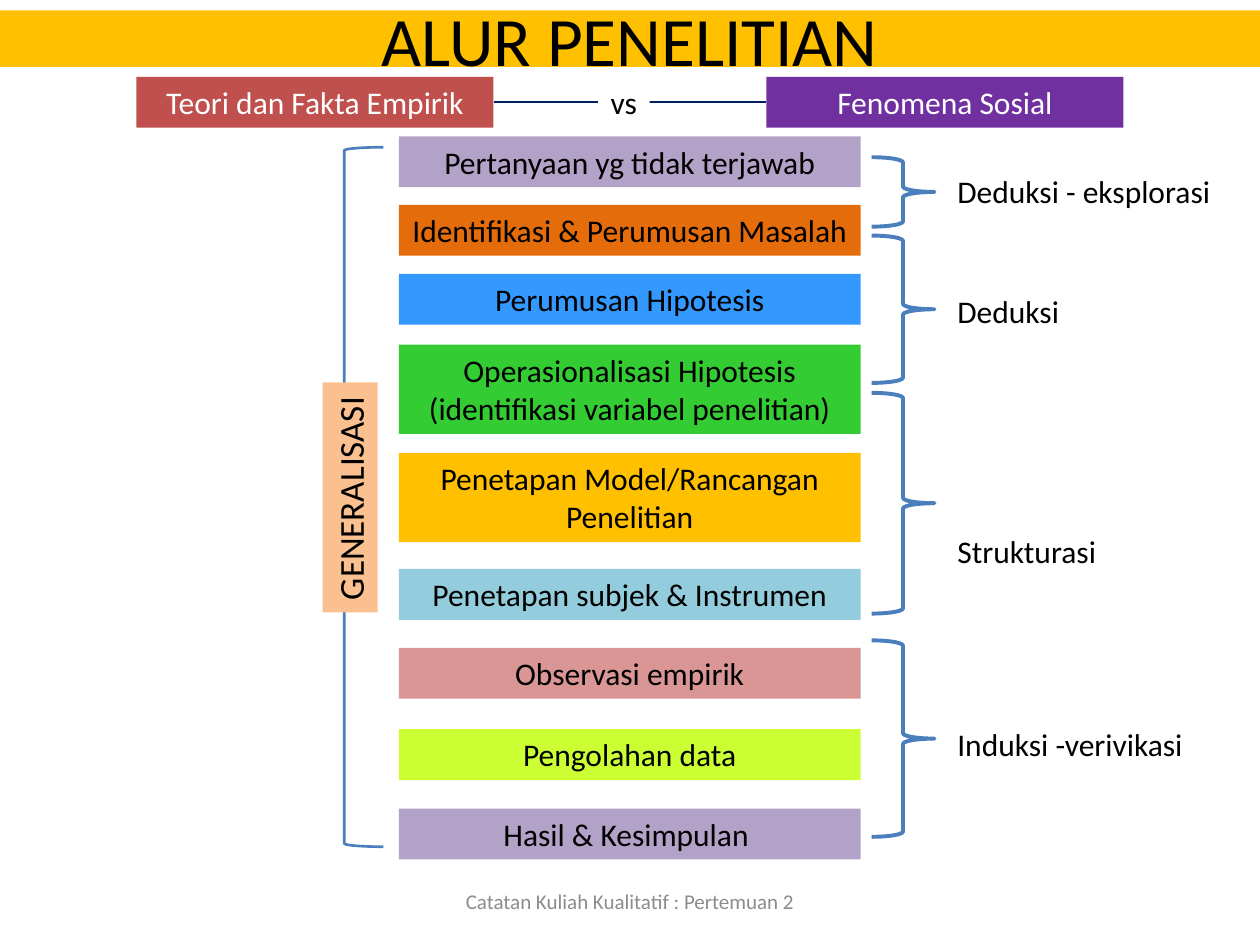
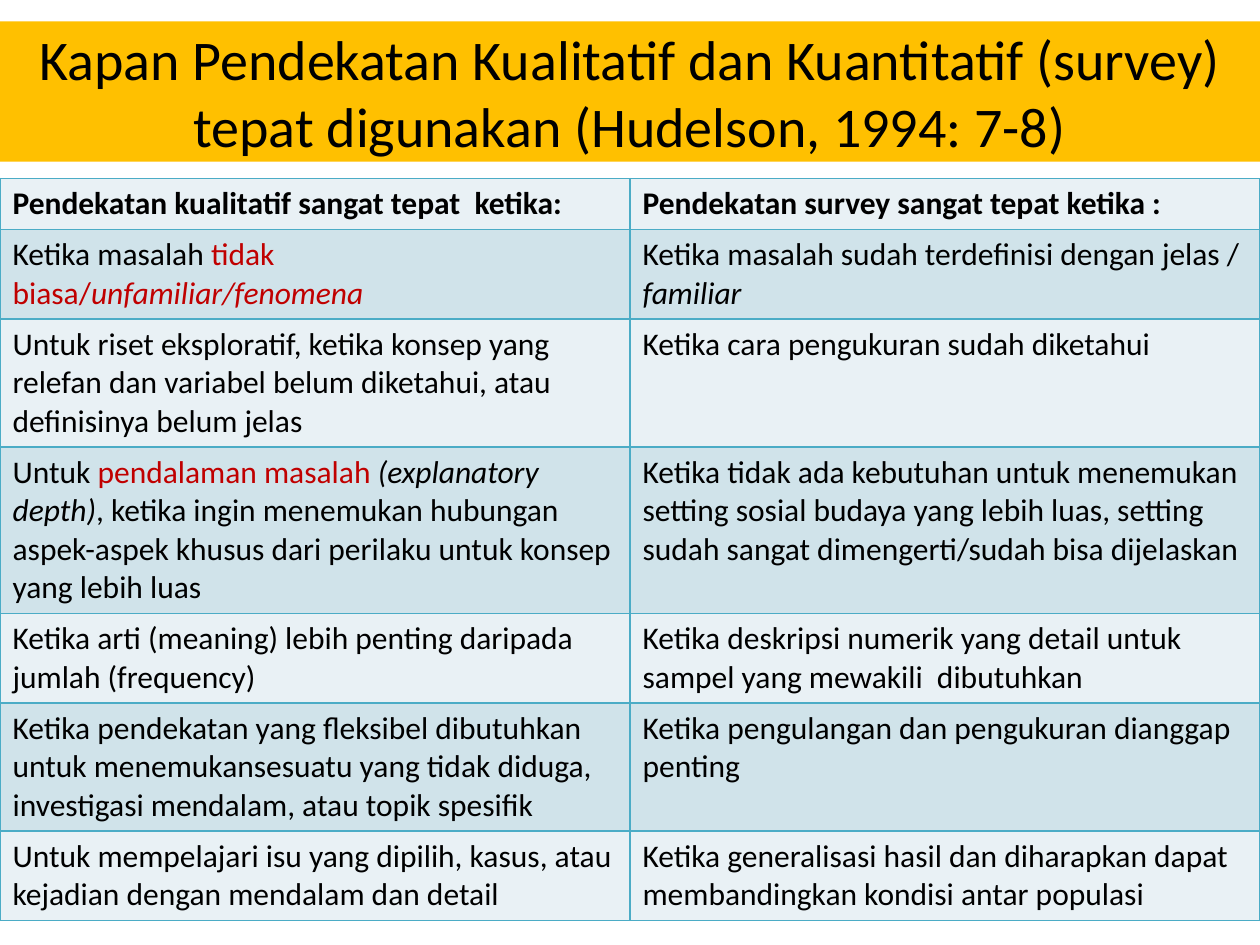
import dataclasses
import pptx
import pptx.dml.color
import pptx.enum.shapes
import pptx.enum.text
import pptx.oxml
import pptx.oxml.ns
import pptx.util

Cm = pptx.util.Cm
Pt = pptx.util.Pt
SHAPES = pptx.enum.shapes.MSO_SHAPE
ALIGN = pptx.enum.text.PP_ALIGN
ANCHOR = pptx.enum.text.MSO_ANCHOR
GROW = pptx.enum.text.MSO_AUTO_SIZE.SHAPE_TO_FIT_TEXT

FONT = "Calibri"
BLACK, WHITE, RED = "000000", "FFFFFF", "C00000"
GOLD, NAVY, BLUE, GREY = "FFC000", "002060", "4B7EBC", "8C8C8C"
BORDER, BANDS = "4BACC6", ("E9F1F5", "D0E3EA")
PAGE_WIDTH, PAGE_HEIGHT = 25.4, 19.05
LINE_HEIGHT, PADDING = 0.775, 0.25

STEPS = [
    (0, "B3A2C7", ["Pertanyaan yg tidak terjawab"], 1),
    (1.38, "E46C0A", ["Identifikasi & Perumusan Masalah"], 1),
    (2.77, "3399FF", ["Perumusan Hipotesis"], 1),
    (4.2, "33CC33", ["Operasionalisasi Hipotesis", "(identifikasi variabel penelitian)"], 2),
    (6.38, GOLD, ["Penetapan Model/Rancangan Penelitian"], 2),
    (8.72, "93CDDD", ["Penetapan subjek & Instrumen"], 1),
    (10.31, "D99694", ["Observasi empirik"], 1),
    (11.95, "CCFF33", ["Pengolahan data"], 1),
    (13.55, "B3A2C7", ["Hasil & Kesimpulan "], 1),
]

PHASES = [
    (0, 1.4, "Deduksi - eksplorasi", 0.17, 5.66),
    (1.58, 2.97, "Deduksi", 2.6, 2.6),
    (4.75, 4.45, "Strukturasi", 7.42, 3.32),
    (9.74, 3.96, "Induksi -verivikasi", 11.32, 5.1),
]

BOLD, ITALIC = {"bold": True}, {"italic": True}
COMPARISON = [
    (1, [("Pendekatan kualitatif sangat tepat  ketika:", BOLD)],
     [("Pendekatan survey sangat tepat ketika :", BOLD)]),
    (2, ["Ketika masalah ", ("tidak biasa/", {"color": RED}),
         ("unfamiliar/fenomena", {"color": RED, "italic": True})],
     ["Ketika masalah sudah terdefinisi dengan jelas / ", ("familiar", ITALIC)]),
    (3, ["Untuk riset eksploratif, ketika konsep yang relefan dan variabel belum diketahui, "
         "atau definisinya belum jelas"],
     ["Ketika cara pengukuran sudah diketahui"]),
    (4, ["Untuk ", ("pendalaman masalah ", {"color": RED}), ("(explanatory depth)", ITALIC),
         ", ketika ingin menemukan hubungan aspek-aspek khusus dari perilaku "
         "untuk konsep yang lebih luas"],
     ["Ketika tidak ada kebutuhan untuk menemukan  setting sosial budaya yang lebih luas, "
      "setting sudah sangat dimengerti/sudah bisa dijelaskan"]),
    (2, ["Ketika arti (meaning) lebih penting daripada jumlah (frequency)"],
     ["Ketika deskripsi numerik yang detail untuk sampel yang mewakili  dibutuhkan"]),
    (3, ["Ketika pendekatan yang fleksibel dibutuhkan untuk menemukansesuatu yang tidak diduga, "
         "investigasi mendalam, atau topik spesifik"],
     ["Ketika pengulangan dan pengukuran dianggap penting"]),
    (2, ["Untuk mempelajari isu yang dipilih, kasus, atau kejadian dengan mendalam dan detail"],
     ["Ketika generalisasi hasil dan diharapkan dapat membandingkan kondisi antar populasi"]),
]


@dataclasses.dataclass
class Box:
    """Rectangle in centimetres."""
    left: float
    top: float
    width: float
    height: float

    def inner(self, left, top, width, height):
        """Return a box placed relative to this one."""
        return Box(self.left + left, self.top + top, width, height)

    def lengths(self):
        """Return the four lengths for python-pptx."""
        return [Cm(value) for value in dataclasses.astuple(self)]


def rgb(color):
    """Turn a hex string into a colour."""
    return pptx.dml.color.RGBColor.from_string(color)


def paint(fill, color):
    """Give a fill one solid colour."""
    fill.solid()
    fill.fore_color.rgb = rgb(color)


def text_height(lines):
    """Return the height of a box holding lines of body text."""
    return PADDING + LINE_HEIGHT * lines


def add_span(para, text, color=BLACK, size=18, **formats):
    """Add a formatted run to a paragraph."""
    span = para.add_run()
    span.text = text
    for name, value in {"name": FONT, "size": Pt(size), **formats}.items():
        setattr(span.font, name, value)
    span.font.color.rgb = rgb(color)


def write(shape, lines, color=BLACK, size=18, align=ALIGN.CENTER, **frame_formats):
    """Write one paragraph per line into a shape."""
    frame = shape.text_frame
    formats = {"word_wrap": True, "vertical_anchor": ANCHOR.TOP, **frame_formats}
    for name, value in formats.items():
        setattr(frame, name, value)
    for index, line in enumerate(lines):
        para = frame.add_paragraph() if index else frame.paragraphs[0]
        para.alignment = align
        add_span(para, line, color, size)


def add_panel(page, box, fill, lines, **formats):
    """Add a filled rectangle with text."""
    panel = page.shapes.add_shape(SHAPES.RECTANGLE, *box.lengths())
    panel.shadow.inherit = False
    paint(panel.fill, fill)
    panel.line.fill.background()
    write(panel, lines, **formats)
    return panel


def add_label(page, box, text, **formats):
    """Add a plain text box."""
    write(page.shapes.add_textbox(*box.lengths()), [text], **formats)


def add_bracket(page, kind, box, weight):
    """Add an outlined brace or bracket."""
    bracket = page.shapes.add_shape(kind, *box.lengths())
    bracket.shadow.inherit = False
    bracket.fill.background()
    bracket.line.color.rgb = rgb(BLUE)
    bracket.line.width = Pt(weight)


def add_title(page, box, text, size):
    """Add the gold title band."""
    add_panel(page, box, GOLD, [text], size=size, vertical_anchor=ANCHOR.MIDDLE)


def add_versus(page, box):
    """Place the two opposing sources joined by a line."""
    width = 7.2
    theory = add_panel(page, box.inner(0, 0, width, box.height), "C0504D",
                       ["Teori dan Fakta Empirik"], color=WHITE, auto_size=GROW)
    social = add_panel(page, box.inner(box.width - width, 0, width, box.height), "7030A0",
                       ["Fenomena Sosial"], color=WHITE, auto_size=GROW)
    link = page.shapes.add_connector(pptx.enum.shapes.MSO_CONNECTOR.STRAIGHT, 0, 0, 0, 0)
    link.begin_connect(theory, 3)
    link.end_connect(social, 1)
    link.line.color.rgb = rgb(NAVY)
    link.line.width = Pt(1)
    link._element.spPr.append(pptx.oxml.parse_xml(
        f'<a:effectLst {pptx.oxml.ns.nsdecls("a")}/>'))
    add_panel(page, box.inner(9.31, 0, 1.04, box.height), WHITE, ["vs"],
              align=ALIGN.LEFT, word_wrap=False, auto_size=GROW)


def add_steps(page, box):
    """Stack the research steps."""
    for top, fill, lines, count in STEPS:
        add_panel(page, box.inner(0, top, box.width, text_height(count)), fill, lines,
                  auto_size=GROW)


def add_phases(page, box):
    """Add the braces and the names of the phases."""
    for top, height, *_ in PHASES:
        add_bracket(page, SHAPES.RIGHT_BRACE, box.inner(0, top, 1.27, height), 2.25)
    for _, _, name, top, width in PHASES:
        add_label(page, box.inner(1.48, top, width, text_height(1)), name,
                  align=ALIGN.LEFT, word_wrap=False, auto_size=GROW)


def add_generalisation(page, box):
    """Add the left bracket with its upright label."""
    add_bracket(page, SHAPES.LEFT_BRACKET, box, 1.5)
    label = add_panel(page, box.inner(-2.2, 6.5, 4.64, 1.11), "FAC090", ["GENERALISASI"],
                      size=20, align=ALIGN.LEFT, word_wrap=False, auto_size=GROW)
    label.rotation = 270


def style_cell(cell, fill):
    """Give a cell its borders and fill."""
    properties = cell._tc.get_or_add_tcPr()
    for side in ("lnL", "lnR", "lnT", "lnB"):
        properties.append(pptx.oxml.parse_xml(
            f'<a:{side} {pptx.oxml.ns.nsdecls("a")} w="{Pt(1)}">'
            f'<a:solidFill><a:srgbClr val="{BORDER}"/></a:solidFill></a:{side}>'))
    paint(cell.fill, fill)


def add_comparison(page, box):
    """Add the table comparing the two approaches."""
    table = page.shapes.add_table(len(COMPARISON), 2, *box.lengths()).table
    table.first_row = table.horz_banding = False
    for column in table.columns:
        column.width = Cm(box.width / 2)
    for index, (lines, *texts) in enumerate(COMPARISON):
        table.rows[index].height = Cm(text_height(lines))
        for cell, parts in zip(table.rows[index].cells, texts):
            style_cell(cell, BANDS[index % 2])
            for part in parts:
                text, formats = (part, {}) if isinstance(part, str) else part
                add_span(cell.text_frame.paragraphs[0], text, **formats)


def build_flow(page):
    """Build the research flow slide."""
    add_title(page, Box(0, 0.21, PAGE_WIDTH, 1.14), "ALUR PENELITIAN", 39.6)
    add_versus(page, Box(2.75, 1.55, 19.9, text_height(1)))
    add_steps(page, Box(8.04, 2.75, 9.31, 14.58))
    add_phases(page, Box(17.57, 3.17, 7.14, 13.7))
    add_generalisation(page, Box(6.94, 2.97, 0.79, 14.1))
    add_label(page, Box(8.68, 17.66, 8.04, 1.01), "Catatan Kuliah Kualitatif : Pertemuan 2",
              color=GREY, size=12, vertical_anchor=ANCHOR.MIDDLE)


def build_approaches(page):
    """Build the slide on when each approach fits."""
    add_title(page, Box(0, 0.43, PAGE_WIDTH, 2.83),
              "Kapan Pendekatan Kualitatif dan Kuantitatif (survey) "
              "tepat digunakan (Hudelson, 1994: 7-8)", 32)
    add_comparison(page, Box(0, 3.6, PAGE_WIDTH, 14.76))


def main():
    """Build and save the deck."""
    deck = pptx.Presentation()
    deck.slide_width, deck.slide_height = Cm(PAGE_WIDTH), Cm(PAGE_HEIGHT)
    for build in (build_flow, build_approaches):
        build(deck.slides.add_slide(deck.slide_layouts[6]))
    deck.save("out.pptx")


if __name__ == "__main__":
    main()
